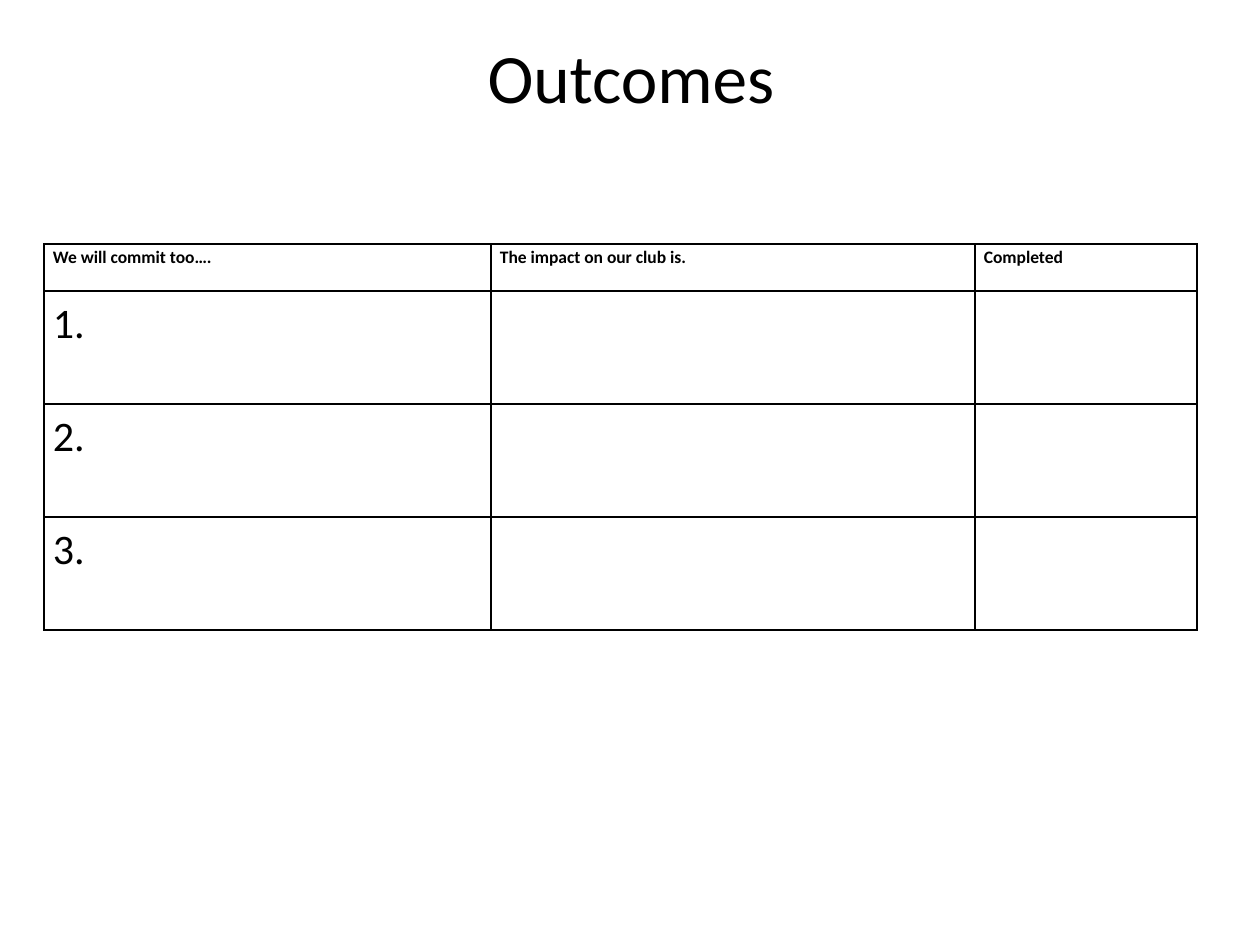
from lxml import etree
from pptx import Presentation
from pptx.dml.color import RGBColor
from pptx.enum.text import MSO_ANCHOR, PP_ALIGN
from pptx.oxml.ns import qn
from pptx.util import Pt

PX = 914400 // 126
BLACK = RGBColor(0, 0, 0)
WHITE = RGBColor(255, 255, 255)
FONT = "Calibri"
LEFT, CENTER = PP_ALIGN.LEFT, PP_ALIGN.CENTER
TOP, MIDDLE = MSO_ANCHOR.TOP, MSO_ANCHOR.MIDDLE

COLS = [447, 484, 222]
ROWS = [47, 113, 113, 113]
CELLS = [
    ["We will commit too….", "The impact on our club is.", "Completed"],
    ["1.", "", ""],
    ["2.", "", ""],
    ["3.", "", ""],
]


def write(frame, text, size, bold=False, align=LEFT, space=1.0):
    para = frame.paragraphs[0]
    para.alignment = align
    para.line_spacing = space
    para.font.size = Pt(size)
    if text:
        run = para.add_run()
        run.text = text
        font = run.font
        font.name, font.size, font.bold = FONT, Pt(size), bold
        font.color.rgb = BLACK


def add_title(slide, text):
    title = slide.shapes.title
    title.left, title.top = 64 * PX, 26 * PX
    title.width, title.height = 1134 * PX, 100 * PX
    title.text_frame.vertical_anchor = MIDDLE
    write(title.text_frame, text, 39.6, align=CENTER)


def edge(cell):
    """Draw a thin black line on all four sides of the cell."""
    props = cell._tc.get_or_add_tcPr()
    for side in ("lnL", "lnR", "lnT", "lnB"):
        line = etree.SubElement(props, qn(f"a:{side}"), w=str(Pt(1)))
        fill = etree.SubElement(line, qn("a:solidFill"))
        etree.SubElement(fill, qn("a:srgbClr"), val=str(BLACK))


def add_grid(slide, left, top):
    frame = slide.shapes.add_table(
        len(ROWS), len(COLS), left * PX, top * PX, sum(COLS) * PX, sum(ROWS) * PX
    )
    table = frame.table
    for col, width in zip(table.columns, COLS):
        col.width = width * PX
    for r, (height, texts) in enumerate(zip(ROWS, CELLS)):
        table.rows[r].height = height * PX
        for c, text in enumerate(texts):
            cell = table.cell(r, c)
            cell.margin_left = cell.margin_right = 9 * PX
            cell.margin_top = cell.margin_bottom = 0
            cell.vertical_anchor = TOP
            edge(cell)
            cell.fill.solid()
            cell.fill.fore_color.rgb = WHITE
            head = r == 0
            write(cell.text_frame, text, 10 if head else 24, bold=head, space=1.15)


def main():
    deck = Presentation()
    deck.slide_width, deck.slide_height = 1260 * PX, 945 * PX
    slide = deck.slides.add_slide(deck.slide_layouts[5])
    add_title(slide, "Outcomes")
    add_grid(slide, 44, 244)
    deck.save("out.pptx")


if __name__ == "__main__":
    main()
